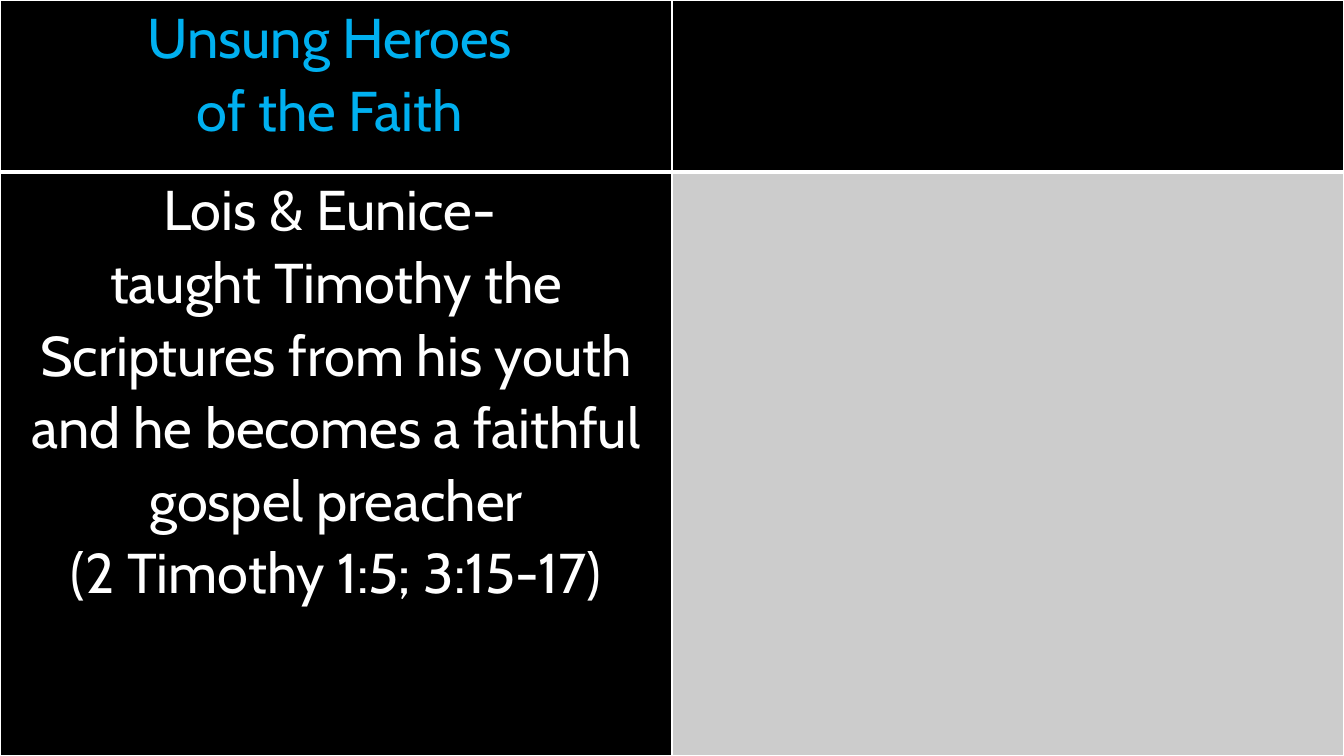
import pptx
import pptx.util
import pptx.dml.color
import pptx.enum.text
import pptx.oxml.ns
import lxml.etree

THEME = {
    "font": "Cabin",
    "size": pptx.util.Pt(40),
    "line_spacing": 1.07,
    "black": "000000",
    "white": "FFFFFF",
    "heading": "00B0F0",
    "panel": "CCCCCC",
    "thin": pptx.util.Pt(1),
    "thick": pptx.util.Pt(3),
}


def rgb(name):
    return pptx.dml.color.RGBColor.from_string(THEME[name])


def add_border(cell, side, width):
    properties = cell._tc.get_or_add_tcPr()
    line = lxml.etree.SubElement(
        properties, pptx.oxml.ns.qn(f"a:ln{side}"), w=str(width))
    fill = lxml.etree.SubElement(line, pptx.oxml.ns.qn("a:solidFill"))
    lxml.etree.SubElement(
        fill, pptx.oxml.ns.qn("a:srgbClr"), val=THEME["white"])


# Content: paragraphs, text colour and fill of each cell
heroes_rows = [
    [
        (["Unsung Heroes ", "of the Faith "], "heading", "black"),
        ([], "white", "black"),
    ],
    [
        (["Lois & Eunice- ",
          "taught Timothy the Scriptures from his youth "
          "and he becomes a faithful gospel preacher",
          "(2 Timothy 1:5; 3:15-17)"], "white", "black"),
        ([], "white", "panel"),
    ],
]
row_heights = [pptx.util.Cm(4.34), pptx.util.Cm(14.71)]

# Slide
deck = pptx.Presentation()
deck.slide_width = pptx.util.Cm(33.87)
deck.slide_height = pptx.util.Cm(19.05)
slide = deck.slides.add_slide(deck.slide_layouts[6])
slide.background.fill.solid()
slide.background.fill.fore_color.rgb = rgb("black")

# Table over the whole slide
heroes = slide.shapes.add_table(
    2, 2, 0, 0, deck.slide_width, deck.slide_height).table
heroes.first_row = False
heroes.horz_banding = False
for row, height in zip(heroes.rows, row_heights):
    row.height = height

# Cells, with a thick rule between heading and body
for row_index, row_content in enumerate(heroes_rows):
    for column_index, (lines, text_color, fill_color) in enumerate(row_content):
        cell = heroes.cell(row_index, column_index)
        rule_side = "B" if row_index == 0 else "T"
        for side in "LRTB":
            add_border(cell, side, THEME["thick" if side == rule_side else "thin"])
        cell.fill.solid()
        cell.fill.fore_color.rgb = rgb(fill_color)

        cell_format = {
            "margin_left": pptx.util.Cm(0.18),
            "margin_right": pptx.util.Cm(0.18),
            "margin_top": 0,
            "margin_bottom": 0,
        }
        for attribute, value in cell_format.items():
            setattr(cell, attribute, value)

        cell.text = "\n".join(lines)
        for paragraph in cell.text_frame.paragraphs:
            paragraph.alignment = pptx.enum.text.PP_ALIGN.CENTER
            paragraph.line_spacing = THEME["line_spacing"]
            for run in paragraph.runs:
                for attribute in ("size", "name"):
                    key = "font" if attribute == "name" else attribute
                    setattr(run.font, attribute, THEME[key])
                run.font.color.rgb = rgb(text_color)

deck.save("out.pptx")
